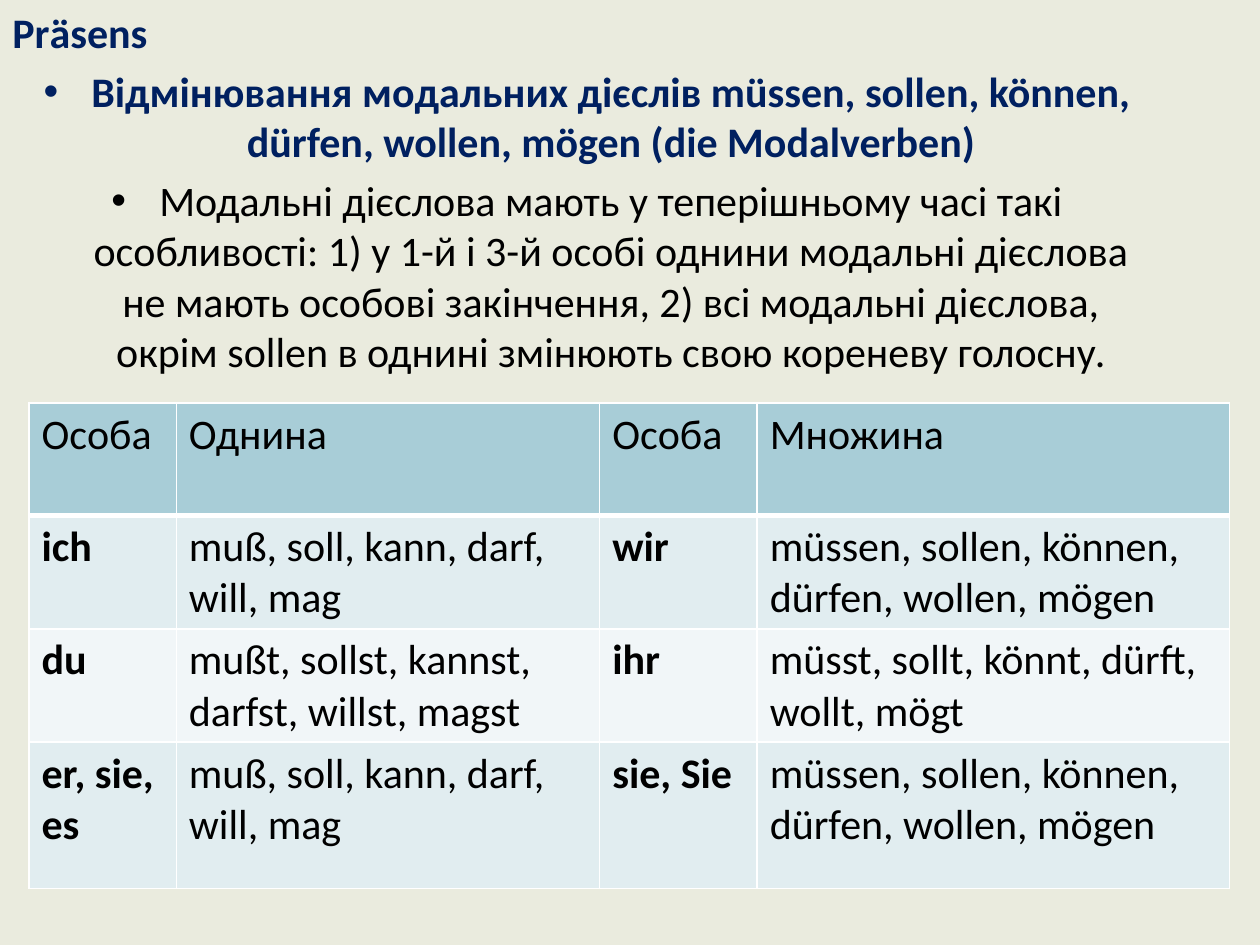
from lxml.etree import SubElement
from pptx import Presentation
from pptx.dml.color import RGBColor
from pptx.enum.text import PP_ALIGN
from pptx.oxml.ns import qn
from pptx.util import Inches, Pt

NAVY, BLACK, WHITE, CREAM = "002060", "000000", "FFFFFF", "EAEBDE"
HEADER_FILL = "A8CDD7"
BAND_FILLS = ["E1EDF0", "F1F6F8"]
COLUMN_WIDTHS = [1.17, 3.36, 1.25, 3.75]
ROW_HEIGHTS = [0.89, 0.9, 0.9, 1.16]
PLURAL = "müssen, sollen, können, dürfen, wollen, mögen"
SINGULAR = "muß, soll, kann, darf, will, mag"
CONJUGATION = [
    ["Особа", "Однина", "Особа", "Множина"],
    ["ich", SINGULAR, "wir", PLURAL],
    ["du", "mußt, sollst, kannst, darfst, willst, magst", "ihr",
     "müsst, sollt, könnt, dürft, wollt, mögt"],
    ["er, sie, es", SINGULAR, "sie, Sie", PLURAL],
]
TOPIC = f"Відмінювання модальних дієслів {PLURAL} (die Modalverben)"
RULE = ("Модальні дієслова мають у теперішньому часі такі особливості: "
        "1) у 1-й і 3-й особі однини модальні дієслова не мають особові закінчення, "
        "2) всі модальні дієслова, окрім sollen в однині змінюють свою кореневу голосну.")


def paint(target, color):
    target.solid()
    target.fore_color.rgb = RGBColor.from_string(color)


def write(paragraph, text, color=BLACK, bold=False, size=24):
    run = paragraph.add_run()
    run.text = text
    run.font.name = "Calibri"
    run.font.size = Pt(size)
    run.font.bold = bold
    run.font.color.rgb = RGBColor.from_string(color)


def add_frame(slide, left, top, width, height, wrap=True):
    box = slide.shapes.add_textbox(*map(Inches, (left, top, width, height)))
    box.text_frame.word_wrap = wrap
    return box.text_frame


def make_bullet(paragraph):
    paragraph.alignment = PP_ALIGN.CENTER
    paragraph.space_before = Pt(4.8)
    properties = paragraph._p.get_or_add_pPr()
    properties.set("marL", str(Inches(0.38)))
    properties.set("indent", str(-Inches(0.38)))
    SubElement(properties, qn("a:buFont"), typeface="Arial")
    SubElement(properties, qn("a:buChar"), char="•")


def add_borders(cell, top, bottom):
    properties = cell._tc.get_or_add_tcPr()
    for side, width in {"L": 1, "R": 1, "T": top, "B": bottom}.items():
        line = SubElement(properties, qn(f"a:ln{side}"), w=str(Pt(width)))
        fill = SubElement(line, qn("a:solidFill"))
        SubElement(fill, qn("a:srgbClr"), val=WHITE)


def add_conjugation(slide):
    table = slide.shapes.add_table(
        len(ROW_HEIGHTS), len(COLUMN_WIDTHS), Inches(0.23), Inches(3.2),
        Inches(sum(COLUMN_WIDTHS)), Inches(sum(ROW_HEIGHTS))).table
    for column, width in zip(table.columns, COLUMN_WIDTHS):
        column.width = Inches(width)
    for row, height in zip(table.rows, ROW_HEIGHTS):
        row.height = Inches(height)
    for r, forms in enumerate(CONJUGATION):
        for c, form in enumerate(forms):
            cell = table.cell(r, c)
            add_borders(cell, top=3 if r == 1 else 1, bottom=3 if r == 0 else 1)
            paint(cell.fill, BAND_FILLS[(r - 1) % 2] if r else HEADER_FILL)
            write(cell.text_frame.paragraphs[0], form, bold=r > 0 and c % 2 == 0)


def main():
    deck = Presentation()
    deck.slide_width, deck.slide_height = Inches(10), Inches(7.5)
    slide = deck.slides.add_slide(deck.slide_layouts[6])
    paint(slide.background.fill, CREAM)

    explanation = add_frame(slide, 0.16, 0.47, 9, 2.66)
    topic, rule = explanation.paragraphs[0], explanation.add_paragraph()
    for paragraph in (topic, rule):
        make_bullet(paragraph)
    write(topic, TOPIC, color=NAVY, bold=True)
    write(rule, RULE)

    tense = add_frame(slide, 0, 0, 1.41, 0.5, wrap=False)
    write(tense.paragraphs[0], "Prӓsens", color=NAVY, bold=True)

    add_conjugation(slide)
    deck.save("out.pptx")


if __name__ == "__main__":
    main()
